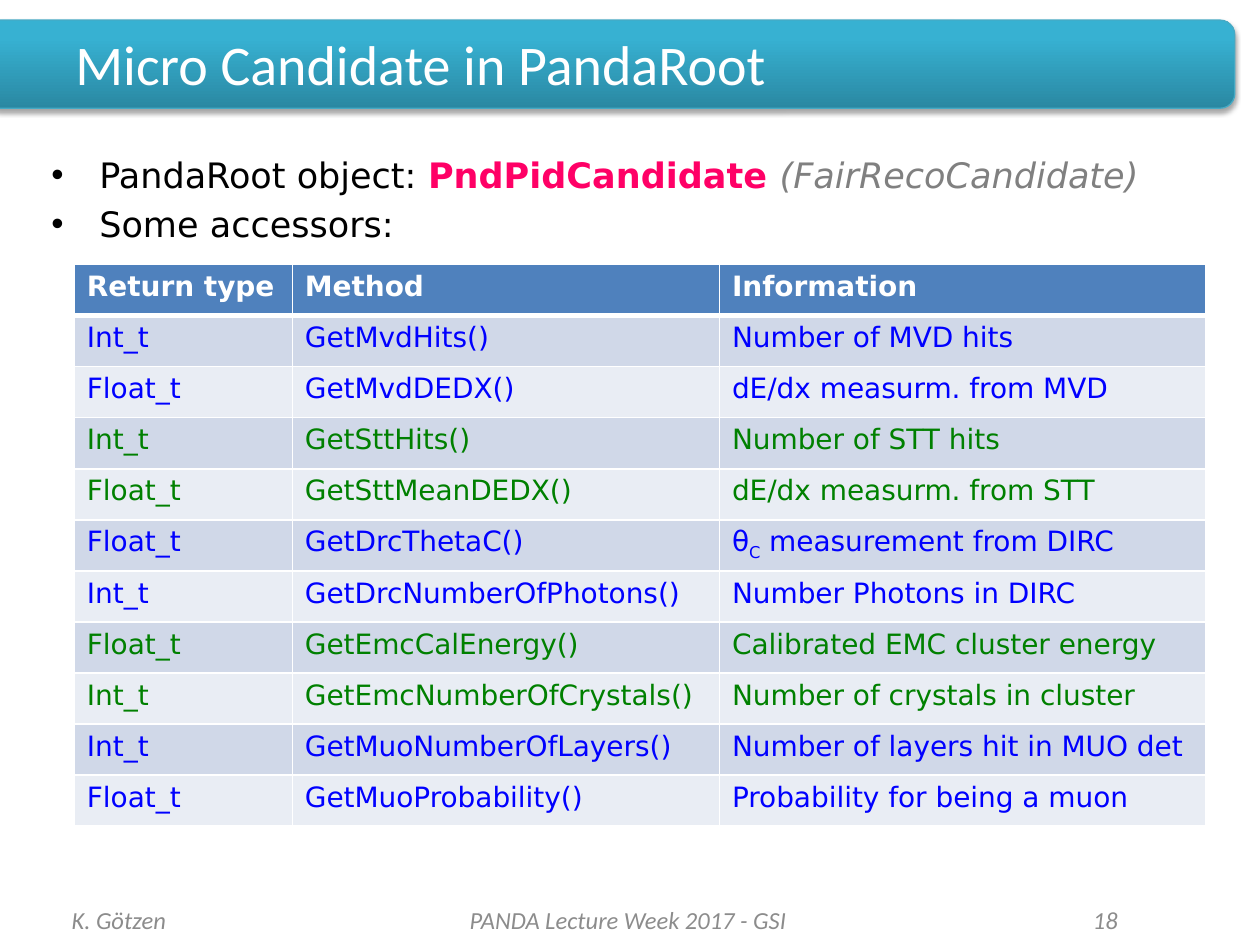
from lxml import etree
from pptx import Presentation
from pptx.dml.color import RGBColor
from pptx.enum.shapes import MSO_SHAPE
from pptx.enum.text import MSO_ANCHOR, PP_ALIGN
from pptx.oxml import parse_xml
from pptx.oxml.ns import nsdecls, qn
from pptx.util import Inches, Pt

ROUNDED = MSO_SHAPE.ROUNDED_RECTANGLE
TOP, MIDDLE = MSO_ANCHOR.TOP, MSO_ANCHOR.MIDDLE
LEFT, CENTER, RIGHT = PP_ALIGN.LEFT, PP_ALIGN.CENTER, PP_ALIGN.RIGHT

WHITE = RGBColor(0xFF, 0xFF, 0xFF)
BLACK = RGBColor(0, 0, 0)
PINK = RGBColor(0xFF, 0, 0x66)
GRAY = RGBColor(0x80, 0x80, 0x80)
FOOTER_GRAY = RGBColor(0x8C, 0x8C, 0x8C)
BLUE = RGBColor(0, 0, 0xFF)
GREEN = RGBColor(0, 0x80, 0)
HEADER_FILL = RGBColor(0x4F, 0x81, 0xBD)
BAND_FILLS = (RGBColor(0xD0, 0xD8, 0xE8), RGBColor(0xE9, 0xED, 0xF4))
BANNER_DARK = RGBColor(0x2A, 0x88, 0xA2)
BANNER_LIGHT = RGBColor(0x37, 0xB1, 0xD2)
BANNER_LINE = RGBColor(0x46, 0xAA, 0xC5)

HEAD_FONT, BODY_FONT = "Calibri", "DejaVu Sans"

TITLE = "Micro Candidate in PandaRoot"
BULLETS = [  # runs: text, colour, bold, italic
    [("PandaRoot object: ", BLACK, False, False),
     ("PndPidCandidate ", PINK, True, False),
     ("(FairRecoCandidate)", GRAY, False, True)],
    [("Some accessors:", BLACK, False, False)],
]
FOOTERS = [  # text, left, width, alignment
    ("K. Götzen", 0.47, 2.33, LEFT),
    ("PANDA Lecture Week 2017 - GSI", 3.03, 3.91, CENTER),
    ("18", 7.5, 1.47, RIGHT),
]
HEADER = ("Return type", "Method", "Information")
ACCESSORS = [  # a tuple in the last column is base, subscript, rest
    ("Int_t", "GetMvdHits()", "Number of MVD hits"),
    ("Float_t", "GetMvdDEDX()", "dE/dx measurm. from MVD"),
    ("Int_t", "GetSttHits()", "Number of STT hits"),
    ("Float_t", "GetSttMeanDEDX()", "dE/dx measurm. from STT"),
    ("Float_t", "GetDrcThetaC()", ("θ", "C", " measurement from DIRC")),
    ("Int_t", "GetDrcNumberOfPhotons()", "Number Photons in DIRC"),
    ("Float_t", "GetEmcCalEnergy()", "Calibrated EMC cluster energy"),
    ("Int_t", "GetEmcNumberOfCrystals()", "Number of crystals in cluster"),
    ("Int_t", "GetMuoNumberOfLayers()", "Number of layers hit in MUO det"),
    ("Float_t", "GetMuoProbability()", "Probability for being a muon"),
]
COL_WIDTHS = (1.73, 3.39, 3.86)
TABLE_LEFT, TABLE_TOP, TABLE_HEIGHT = 0.59, 2.1, 4.46


def add_run(p, text, font, size, color, bold=False, italic=False):
    r = p.add_run()
    r.text = text
    f = r.font
    f.name, f.size, f.bold, f.italic = font, Pt(size), bold, italic
    f.color.rgb = color
    return r


def add_box(s, left, top, width, height, anchor):
    tf = s.shapes.add_textbox(Inches(left), Inches(top),
                              Inches(width), Inches(height)).text_frame
    tf.word_wrap = True
    tf.vertical_anchor = anchor
    return tf


def add_banner(s):
    sp = s.shapes.add_shape(ROUNDED, Inches(-0.12), Inches(0.16),
                            Inches(9.92), Inches(0.7))
    sp.fill.gradient()
    sp.fill.gradient_angle = 90
    dark, light = sp.fill.gradient_stops
    dark.position, dark.color.rgb = 0, BANNER_DARK
    light.position, light.color.rgb = 0.8, BANNER_LIGHT
    sp.line.color.rgb = BANNER_LINE
    sp.line.width = Pt(0.75)
    sp.shadow.inherit = False
    effects = sp.fill._xPr.find(qn("a:effectLst"))
    effects.append(parse_xml(
        f'<a:outerShdw {nsdecls("a")} blurRad="{Pt(3.1)}" dist="{Pt(1.8)}" '
        'dir="5400000" rotWithShape="0"><a:srgbClr val="000000">'
        '<a:alpha val="35000"/></a:srgbClr></a:outerShdw>'))


def add_bullets(s):
    tf = add_box(s, 0.31, 1.17, 9.38, 0.9, TOP)
    for i, runs in enumerate(BULLETS):
        p = tf.add_paragraph() if i else tf.paragraphs[0]
        pPr = p._p.get_or_add_pPr()
        pPr.set("marL", str(Inches(0.38)))
        pPr.set("indent", str(Inches(-0.38)))
        etree.SubElement(pPr, qn("a:buFont")).set("typeface", "Arial")
        etree.SubElement(pPr, qn("a:buChar")).set("char", "•")
        if i:
            p.space_before = Pt(4)
        for text, color, bold, italic in runs:
            add_run(p, text, BODY_FONT, 20, color, bold, italic)


def set_borders(cell, bottom, top):
    tcPr = cell._tc.get_or_add_tcPr()
    for side, width in (("L", 1), ("R", 1), ("T", top), ("B", bottom)):
        tcPr.append(parse_xml(
            f'<a:ln{side} {nsdecls("a")} w="{Pt(width)}"><a:solidFill>'
            f'<a:srgbClr val="{WHITE}"/></a:solidFill></a:ln{side}>'))


def add_accessor_table(s):
    rows = [HEADER] + ACCESSORS
    table = s.shapes.add_table(
        len(rows), len(HEADER), Inches(TABLE_LEFT), Inches(TABLE_TOP),
        Inches(sum(COL_WIDTHS)), Inches(TABLE_HEIGHT)).table
    for col, width in zip(table.columns, COL_WIDTHS):
        col.width = Inches(width)
    for i, row in enumerate(rows):
        is_header = i == 0
        if is_header:
            fill, color = HEADER_FILL, WHITE
        else:  # fills alternate by row, text colours by pair of rows
            fill = BAND_FILLS[(i - 1) % 2]
            color = (BLUE, GREEN)[(i - 1) // 2 % 2]
        for j, content in enumerate(row):
            cell = table.cell(i, j)
            set_borders(cell, 3 if is_header else 1, 3 if i == 1 else 1)
            cell.fill.solid()
            cell.fill.fore_color.rgb = fill
            parts = (content,) if isinstance(content, str) else content
            for k, text in enumerate(parts):
                r = add_run(cell.text_frame.paragraphs[0], text, BODY_FONT,
                            16, color, is_header)
                if k == 1:
                    r.font._element.set("baseline", "-25000")


def main():
    prs = Presentation()
    prs.slide_width, prs.slide_height = Inches(10), Inches(7.5)
    s = prs.slides.add_slide(prs.slide_layouts[6])
    add_banner(s)
    title = add_box(s, 0.5, 0.18, 9, 0.64, MIDDLE)
    add_run(title.paragraphs[0], TITLE, HEAD_FONT, 32, WHITE)
    add_bullets(s)
    for text, left, width, align in FOOTERS:
        p = add_box(s, left, 7.1, width, 0.4, MIDDLE).paragraphs[0]
        p.alignment = align
        add_run(p, text, HEAD_FONT, 14, FOOTER_GRAY, italic=True)
    add_accessor_table(s)
    prs.save("out.pptx")


if __name__ == "__main__":
    main()
